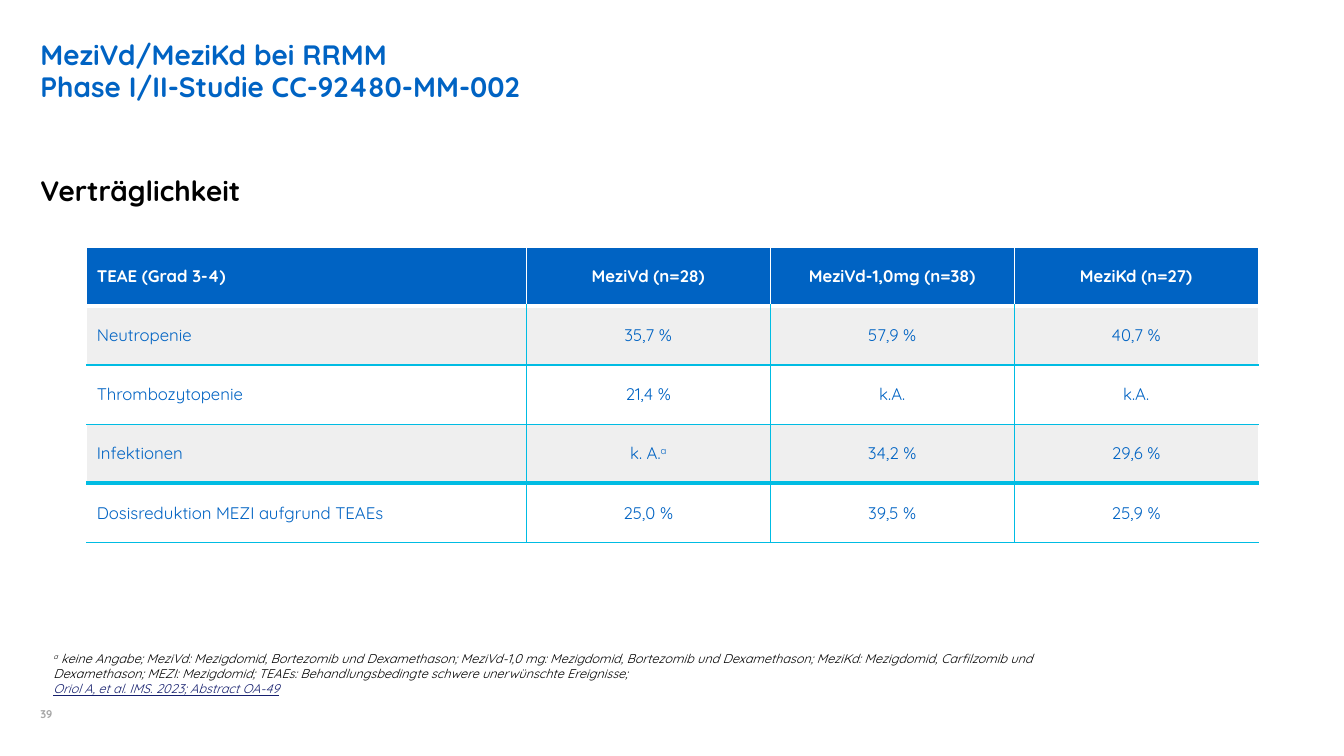
from dataclasses import dataclass

from pptx import Presentation
from pptx.dml.color import RGBColor
from pptx.enum.text import MSO_ANCHOR, MSO_AUTO_SIZE, PP_ALIGN
from pptx.oxml import parse_xml
from pptx.oxml.ns import nsdecls
from pptx.util import Inches, Pt


@dataclass(frozen=True)
class Theme:
    font: str = "Quicksand"
    blue: str = "0063C3"
    cyan: str = "00BCE3"
    navy: str = "151F6D"
    black: str = "000000"
    white: str = "FFFFFF"
    pale: str = "EFEFEF"
    grey: str = "A6A6A6"
    head: int = 20
    body: int = 12
    note: int = 9
    page: int = 8


THEME = Theme()

ROWS = [
    ["TEAE (Grad 3-4)", "MeziVd (n=28)", "MeziVd-1,0mg (n=38)", "MeziKd (n=27)"],
    ["Neutropenie", "35,7 %", "57,9 %", "40,7 %"],
    ["Thrombozytopenie", "21,4 %", "k.A.", "k.A."],
    ["Infektionen", [("k. A.", {}), ("a", {"sup": True})], "34,2 %", "29,6 %"],
    ["Dosisreduktion MEZI aufgrund TEAEs", "25,0 %", "39,5 %", "25,9 %"],
]
WIDTHS = [4.36, 2.42, 2.42, 2.42]
LAST = len(ROWS) - 1
NOTE = [
    [
        ("a", {"sup": True}),
        (" keine Angabe; MeziVd: Mezigdomid, Bortezomib und Dexamethason; "
         "MeziVd-1,0 mg: Mezigdomid, Bortezomib und Dexamethason; "
         "MeziKd: Mezigdomid, Carfilzomib und Dexamethason; MEZI: Mezigdomid; "
         "TEAEs: Behandlungsbedingte schwere unerwünschte Ereignisse;", {}),
    ],
    [("Oriol A, et al. IMS. 2023; Abstract OA-49",
      {"color": THEME.navy, "under": True})],
]


def style(font, size, color, bold=False, italic=False, under=False, sup=False):
    font.name = THEME.font
    font.size = Pt(size)
    font.color.rgb = RGBColor.from_string(color)
    font.bold, font.italic, font.underline = bold, italic, under
    if sup:
        font._element.set("baseline", "30000")


def write(frame, *paras, align=PP_ALIGN.LEFT, spacing=None, **look):
    """Fill a frame; a paragraph is a string or a list of (text, format) runs."""
    for i, runs in enumerate(paras):
        para = frame.paragraphs[0] if i == 0 else frame.add_paragraph()
        para.alignment = align
        if spacing:
            para.line_spacing = spacing
        if isinstance(runs, str):
            para.text = runs
            runs = [(run, {}) for run in para.runs]
        for part, extra in runs:
            if isinstance(part, str):
                run = para.add_run()
                run.text = part
            else:
                run = part
            style(run.font, **{**look, **extra})


def setup(shape, box, anchor=MSO_ANCHOR.TOP, side=0):
    """Place a text shape and return its frame."""
    shape.left, shape.top, shape.width, shape.height = map(Inches, box)
    frame = shape.text_frame
    frame.word_wrap = True
    frame.auto_size = MSO_AUTO_SIZE.NONE
    frame.vertical_anchor = anchor
    frame.margin_left = frame.margin_right = Inches(side)
    frame.margin_top = frame.margin_bottom = 0
    return frame


def label(slide, box, *paras, anchor=MSO_ANCHOR.TOP, side=0, **look):
    shape = slide.shapes.add_textbox(*map(Inches, box))
    write(setup(shape, box, anchor, side), *paras, **look)


def edge(cell, side, color, width):
    cell._tc.get_or_add_tcPr().append(parse_xml(
        f'<a:ln{side} {nsdecls("a")} w="{Pt(width)}"><a:solidFill>'
        f'<a:srgbClr val="{color}"/></a:solidFill></a:ln{side}>'))


def frame_cell(cell, row, col):
    """Draw white outer and header edges, cyan inner ones."""
    grid = THEME.white if row == 0 else THEME.cyan
    above = THEME.white if row <= 1 else THEME.cyan
    end = col == len(WIDTHS) - 1
    thick = (0, LAST - 1)
    edge(cell, "L", THEME.white if col == 0 else grid, 1)
    edge(cell, "R", THEME.white if end else grid, 1)
    edge(cell, "T", above, 3 if row - 1 in thick else 1)
    edge(cell, "B", grid, 3 if row in thick else 1)


def add_grid(slide):
    shape = slide.shapes.add_table(
        len(ROWS), len(WIDTHS), Inches(0.86), Inches(2.45),
        Inches(sum(WIDTHS)), Inches(2.93))
    table = shape.table
    table.horz_banding = False
    for column, width in zip(table.columns, WIDTHS):
        column.width = Inches(width)
    for r, row in enumerate(ROWS):
        head = r == 0
        fill = THEME.blue if head else THEME.pale if r % 2 else THEME.white
        for c, text in enumerate(row):
            cell = table.cell(r, c)
            cell.vertical_anchor = MSO_ANCHOR.MIDDLE
            write(cell.text_frame, text, size=THEME.body, bold=head,
                  color=THEME.white if head else THEME.blue,
                  align=PP_ALIGN.CENTER if c else PP_ALIGN.LEFT)
            frame_cell(cell, r, c)
            cell.fill.solid()
            cell.fill.fore_color.rgb = RGBColor.from_string(fill)


def main():
    deck = Presentation()
    deck.slide_width, deck.slide_height = Inches(13.33), Inches(7.5)
    slide = deck.slides.add_slide(deck.slide_layouts[5])
    title = setup(slide.shapes.title, (0.4, 0.4, 12.53, 0.67))
    write(title, "MeziVd/MeziKd bei RRMM\vPhase I/II-Studie CC-92480-MM-002",
          size=THEME.head, color=THEME.blue, bold=True, spacing=0.95)
    label(slide, (0.4, 1.72, 3.29, 0.4), "Verträglichkeit",
          size=THEME.head, color=THEME.black, bold=True)
    add_grid(slide)
    label(slide, (0.4, 6.46, 10.73, 0.45), *NOTE, anchor=MSO_ANCHOR.BOTTOM,
          side=0.13, size=THEME.note, color=THEME.black, italic=True)
    label(slide, (0.4, 6.92, 0.45, 0.23), "39", anchor=MSO_ANCHOR.BOTTOM,
          size=THEME.page, color=THEME.grey, bold=True)
    deck.save("out.pptx")


if __name__ == "__main__":
    main()
